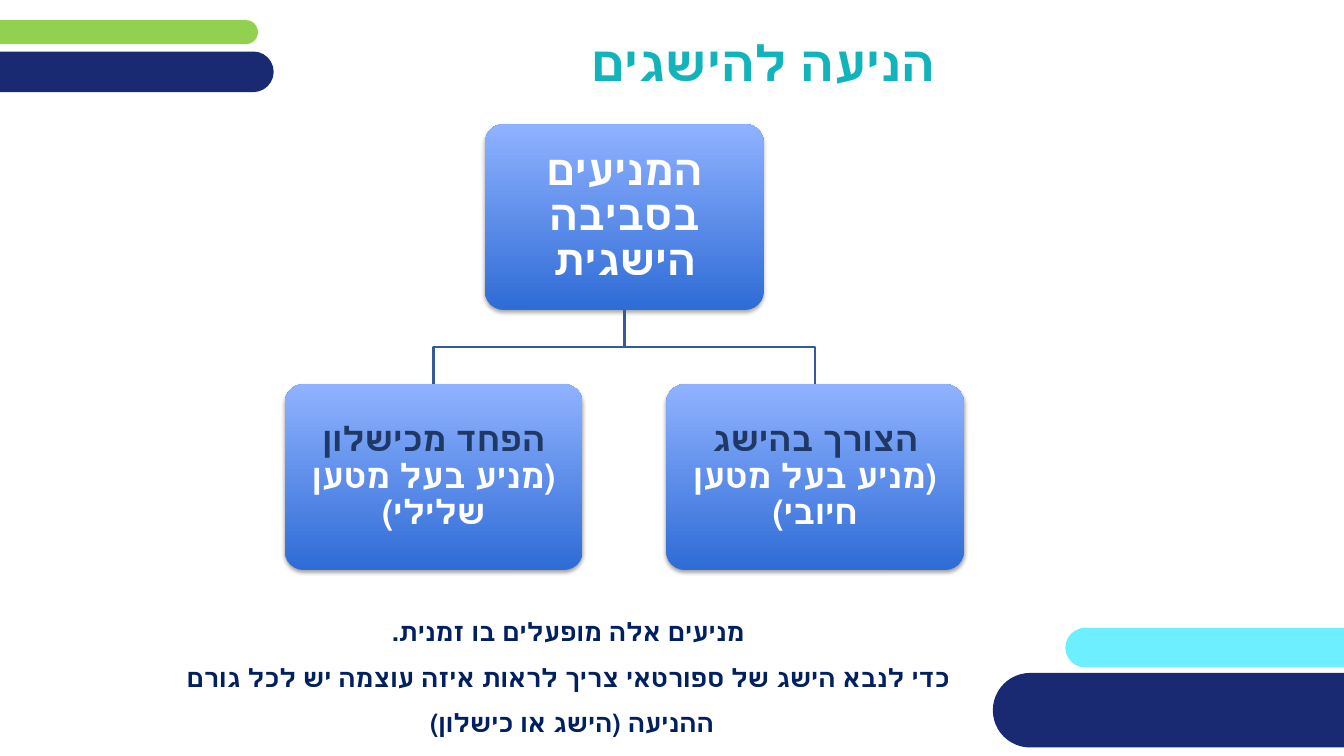
import pptx
import pptx.util
import pptx.dml.color
import pptx.enum.shapes
import pptx.enum.text
from lxml import etree

Pt = pptx.util.Pt
ROUND = pptx.enum.shapes.MSO_SHAPE.ROUNDED_RECTANGLE
ALIGN = pptx.enum.text.PP_ALIGN
ANCHOR = pptx.enum.text.MSO_ANCHOR
NS = "http://schemas.openxmlformats.org/drawingml/2006/main"
FONT = "Quicksand"

# Content: (left, top, width, height) in points
BARS = [
    ((761, 448.5, 375, 28.3), "6CF0FF"),
    ((-20, 14.4, 204.3, 17.1), "92D050"),
    ((-38, 36.8, 233.5, 29), "192A72"),
    ((709.2, 480.7, 296, 53.2), "192A72"),
]
TITLE = "הניעה להישגים"
ROOT = [("המניעים בסביבה הישגית", "FFFFFF")]
CHILDREN = [
    [("הפחד מכישלון ", "1F3864"), ("(מניע בעל מטען שלילי)", "FFFFFF")],
    [("הצורך בהישג ", "1F3864"), ("(מניע בעל מטען חיובי)", "FFFFFF")],
]
NOTES = [
    "מניעים אלה מופעלים בו זמנית.",
    "כדי לנבא הישג של ספורטאי צריך לראות איזה עוצמה יש לכל גורם ההניעה (הישג או כישלון) ",
]

# Tree layout
CENTER, ROOT_TOP, ROOT_W, CHILD_W, BOX_H = 446, 88.6, 199, 212.5, 132.8
GAP, SPREAD = 53, 136.2
CHILD_TOP = ROOT_TOP + BOX_H + GAP


def rgb(value):
    return pptx.dml.color.RGBColor.from_string(value)


def place(box):
    return [Pt(v) for v in box]


def add(parent, tag, **attrs):
    return etree.SubElement(parent, f"{{{NS}}}{tag}", {k: str(v) for k, v in attrs.items()})


def style(p, size, colors, spacing, align=ALIGN.CENTER):
    p.alignment, p.line_spacing = align, spacing
    p._p.get_or_add_pPr().set("rtl", "1")
    for r, color in zip(p.runs, colors):
        r.font.size, r.font.bold, r.font.name = Pt(size), True, FONT
        r.font.color.rgb = rgb(color)


def add_round(box, adj):
    sp = s.shapes.add_shape(ROUND, *place(box))
    sp.adjustments[0] = adj
    sp.shadow.inherit = False
    sp.line.fill.background()
    return sp


def add_box(center, top, width, parts, size):
    sp = add_round((center - width / 2, top, width, BOX_H), 0.1)
    sp.fill.gradient()
    sp.fill.gradient_angle = 90
    for stop, color in zip(sp.fill.gradient_stops, ("2F6CD6", "8FB2FF")):
        stop.color.rgb = rgb(color)
    effects = sp._element.spPr.find(f"{{{NS}}}effectLst")
    shadow = add(effects, "outerShdw", blurRad=Pt(3.1), dist=Pt(1.7),
                 dir=90 * 60000, algn="ctr", rotWithShape=0)
    add(add(shadow, "srgbClr", val="000000"), "alpha", val=37000)
    tf = sp.text_frame
    tf.word_wrap, tf.vertical_anchor = True, ANCHOR.MIDDLE
    tf.margin_left = tf.margin_right = tf.margin_top = tf.margin_bottom = Pt(8.5)
    p = tf.paragraphs[0]
    for text, _ in parts:
        p.add_run().text = text
    style(p, size, [color for _, color in parts], 0.9)


def add_branch(center):
    top = ROOT_TOP + BOX_H
    middle = top + GAP / 2
    points = [(CENTER, middle), (center, middle), (center, CHILD_TOP)]
    fb = s.shapes.build_freeform(Pt(CENTER), Pt(top))
    fb.add_line_segments([(Pt(x), Pt(y)) for x, y in points], close=False)
    sp = fb.convert_to_shape()
    sp.shadow.inherit = False
    sp.fill.background()
    sp.line.color.rgb, sp.line.width = rgb("345A99"), Pt(2)


def add_text(box):
    tf = s.shapes.add_textbox(*place(box)).text_frame
    tf.word_wrap = True
    return tf


prs = pptx.Presentation()
prs.slide_width, prs.slide_height = Pt(960), Pt(540)
s = prs.slides.add_slide(prs.slide_layouts[6])

# Corner bars
for box, color in BARS:
    sp = add_round(box, 0.5)
    sp.fill.solid()
    sp.fill.fore_color.rgb = rgb(color)

# Title
tf = add_text((39, 25.5, 653.8, 42.5))
tf.vertical_anchor = ANCHOR.MIDDLE
tf.text = TITLE
p = tf.paragraphs[0]
pPr = p._p.get_or_add_pPr()
pPr.set("marL", str(Pt(36)))
pPr.set("indent", str(Pt(-18)))
style(p, 35, ["12B4BC"], 0.9, ALIGN.RIGHT)

# Tree of motives
add_box(CENTER, ROOT_TOP, ROOT_W, ROOT, 30)
for side, parts in zip((-1, 1), CHILDREN):
    center = CENTER + side * SPREAD
    add_branch(center)
    add_box(center, CHILD_TOP, CHILD_W, parts, 24)

# Closing notes
tf = add_text((107.3, 426.2, 597.6, 113))
tf.text = "\n".join(NOTES)
for p in tf.paragraphs:
    style(p, 18, ["002060"], 1.5)

prs.save("out.pptx")
